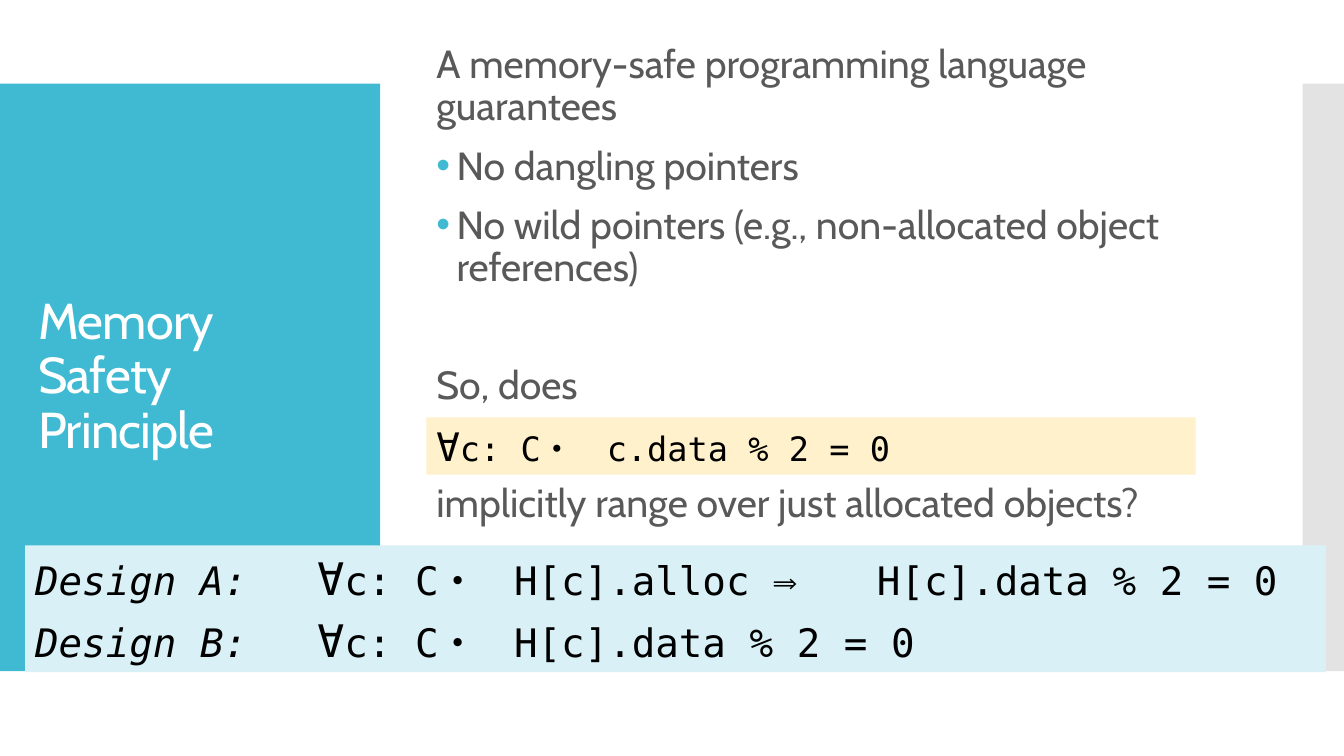
"""Build the Memory Safety Principle slide."""
import pptx
import pptx.dml.color
import pptx.enum.shapes
import pptx.enum.text
import pptx.oxml
import pptx.oxml.ns
import pptx.util
from pptx.util import Inches, Pt

SANS, MONO = "Cabin", "DejaVu Sans Mono"
TEAL, GREY, TEXT = "40BAD2", "C8C8C8", "595959"
CREAM, PALE, BLACK, WHITE = "FFF1CB", "D9F1F6", "000000", "FFFFFF"

TITLE = "Memory Safety Principle"
BODY = [
    ("A memory-safe programming language guarantees", False, 12),
    ("No dangling pointers", True, 12),
    ("No wild pointers (e.g., non-allocated object references)", True, 12),
    ("So, does", False, 54),
    ("implicitly range over just allocated objects?", False, 54),
]
QUESTION = [("", "c: C・\tc.data % 2 = 0")]
DESIGNS = [
    ("Design A:\t", "c: C・\tH[c].alloc ⟹\tH[c].data % 2 = 0"),
    ("Design B:\t", "c: C・\tH[c].data % 2 = 0"),
]


def rgb(hex_color):
    return pptx.dml.color.RGBColor.from_string(hex_color)


def add_xml(parent, tag, inner="", **attrs):
    pairs = " ".join(f'{k}="{v}"' for k, v in attrs.items())
    ns = pptx.oxml.ns.nsdecls("a")
    parent.append(pptx.oxml.parse_xml(f"<a:{tag} {ns} {pairs}>{inner}</a:{tag}>"))


def add_rect(s, box, color):
    kind = pptx.enum.shapes.MSO_SHAPE.RECTANGLE
    sp = s.shapes.add_shape(kind, *map(Inches, box))
    sp.shadow.inherit = False
    sp.fill.solid()
    sp.fill.fore_color.rgb = rgb(color)
    sp.line.fill.background()
    return sp


def add_run(p, text, size, font, color, italic=False):
    r = p.add_run()
    r.text = text
    r.font.size, r.font.name, r.font.italic = Pt(size), font, italic
    r.font.color.rgb = rgb(color)
    return r


def setup_frame(sp):
    tf = sp.text_frame
    tf.word_wrap = True
    tf.auto_size = pptx.enum.text.MSO_AUTO_SIZE.NONE
    tf.vertical_anchor = pptx.enum.text.MSO_ANCHOR.MIDDLE
    return tf


def paragraphs(tf, items):
    for i, item in enumerate(items):
        p = tf.add_paragraph() if i else tf.paragraphs[0]
        p.alignment = pptx.enum.text.PP_ALIGN.LEFT
        yield p, item


def add_formulas(s, box, color, lines, size, after, stops):
    tf = setup_frame(add_rect(s, box, color))
    tabs = "".join(f'<a:tab pos="{Inches(x)}" algn="l"/>' for x in stops)
    for p, (label, formula) in paragraphs(tf, lines):
        p.space_after = Pt(after)
        add_xml(p._p.get_or_add_pPr(), "tabLst", tabs)
        if label:
            add_run(p, label, size, MONO, BLACK, italic=True)
        add_run(p, "∀", size + 4, MONO, BLACK)
        add_run(p, formula, size, MONO, BLACK)


def add_title(s, panel):
    title = s.shapes.title
    panel.element.addnext(title.element)
    title.left, title.top, title.width, title.height = map(Inches, (0.28, 1.23, 3.22, 5.03))
    for p, text in paragraphs(setup_frame(title), [TITLE]):
        p.line_spacing = 0.9
        r = add_run(p, text, 36, SANS, WHITE)
        r.font._element.set("spc", "-60")


def add_body(s):
    tf = setup_frame(s.shapes.add_textbox(*map(Inches, (4.23, 0.03, 8, 5.6))))
    for p, (text, bullet, before) in paragraphs(tf, BODY):
        p.line_spacing, p.space_before = 0.9, Pt(before)
        if bullet:
            pPr = p._p.get_or_add_pPr()
            pPr.set("marL", str(Inches(0.2)))
            pPr.set("indent", str(Inches(-0.2)))
            add_xml(pPr, "buClr", f'<a:srgbClr val="{TEAL}"/>')
            add_xml(pPr, "buFont", typeface="Arial")
            add_xml(pPr, "buChar", char="•")
        add_run(p, text, 28, SANS, TEXT)


def main():
    prs = pptx.Presentation()
    prs.slide_width, prs.slide_height = Inches(13.33), Inches(7.5)
    s = prs.slides.add_slide(prs.slide_layouts[5])
    panel = add_rect(s, (0, 0.83, 3.77, 5.83), TEAL)
    strip = add_rect(s, (12.92, 0.83, 0.41, 5.83), GREY)
    fill = strip.element.spPr.find(pptx.oxml.ns.qn("a:solidFill"))
    add_xml(fill[0], "alpha", val=50000)
    add_title(s, panel)
    add_formulas(s, (4.23, 4.14, 7.63, 0.57), CREAM, QUESTION, 24, 0, [1.69])
    add_body(s)
    add_formulas(s, (0.25, 5.41, 12.9, 1.26), PALE, DESIGNS, 28, 6, [2.8, 4.75, 8.35])
    prs.save("out.pptx")


if __name__ == "__main__":
    main()
